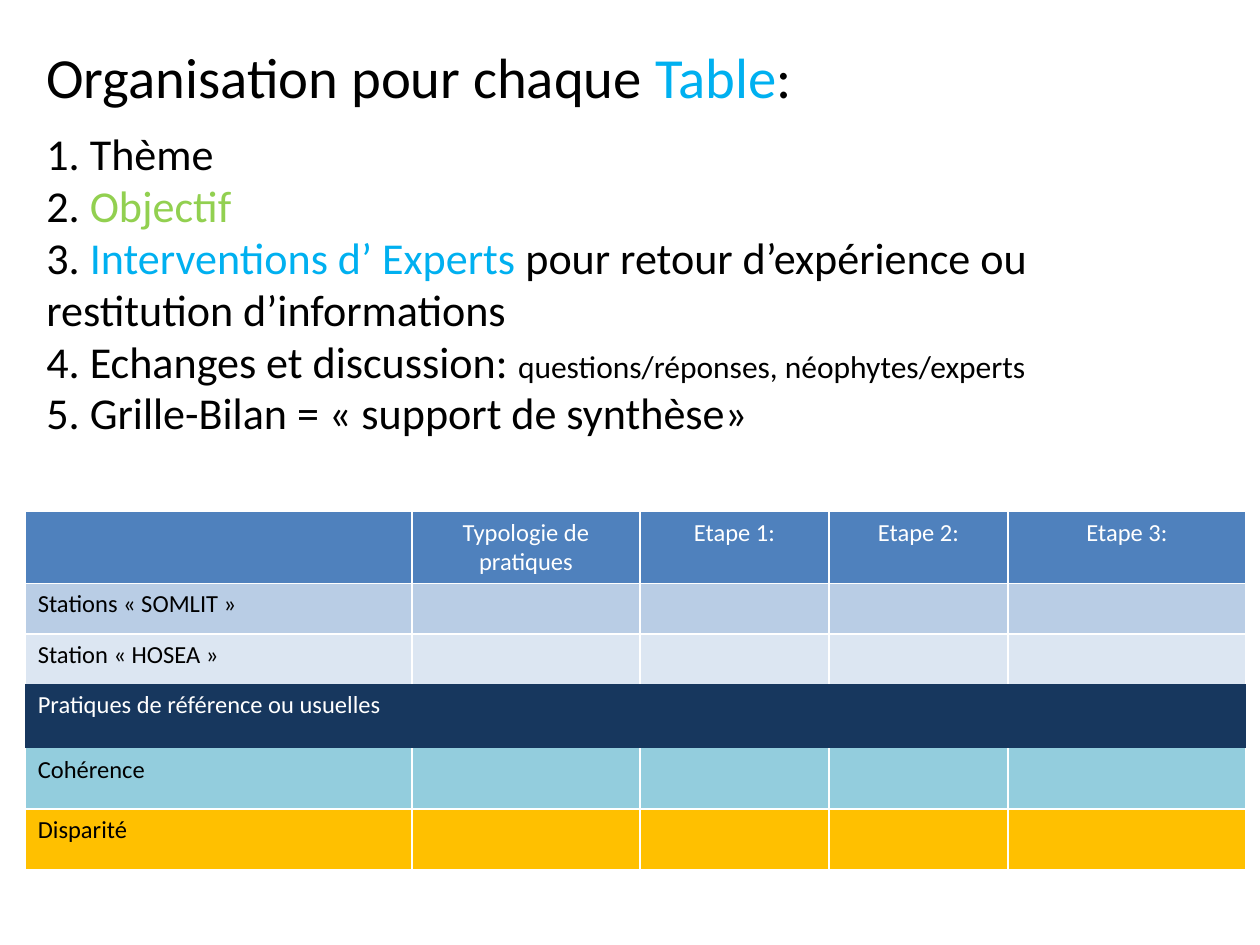
import pptx
import pptx.dml.color
import pptx.enum.text
import pptx.oxml.ns
import pptx.util
from lxml import etree

Inches, Pt = pptx.util.Inches, pptx.util.Pt
ANCHOR = pptx.enum.text.MSO_ANCHOR
ALIGN = pptx.enum.text.PP_ALIGN

BLACK, WHITE, BLUE, GREEN = "000000", "FFFFFF", "00B0F0", "92D050"
FONT = "Calibri"
HEADING, ITEM, DETAIL, CELL = 32.4, 25.2, 18, 14

# Agenda: one line per paragraph, each a list of (text, size, colour)
AGENDA = [
    [("Organisation pour chaque ", HEADING, BLACK), ("Table", HEADING, BLUE), (":", HEADING, BLACK)],
    [("1. Thème", ITEM, BLACK)],
    [("2. ", ITEM, BLACK), ("Objectif", ITEM, GREEN)],
    [("3. ", ITEM, BLACK), ("Interventions d’ Experts ", ITEM, BLUE),
     ("pour retour d’expérience ou restitution d’informations", ITEM, BLACK)],
    [("4. Echanges et discussion: ", ITEM, BLACK),
     ("questions/réponses, néophytes/experts", DETAIL, BLACK)],
    [("5. Grille-Bilan = « support de synthèse»", ITEM, BLACK)],
]

# Summary grid: (texts, height, fill, text colour, bordered sides)
COLUMNS = [3.07, 1.81, 1.5, 1.42, 1.89]
GRID = [
    (["", "Typologie de pratiques", "Etape 1:", "Etape 2:", "Etape 3:"], 0.57, "4F81BD", WHITE, "LRTB"),
    (["Stations « SOMLIT »"], 0.4, "B9CDE5", BLACK, "LRTB"),
    (["Station « HOSEA »"], 0.4, "DCE6F2", BLACK, "LRT"),
    (["Pratiques de référence ou usuelles"], 0.51, "17375E", WHITE, ""),
    (["Cohérence"], 0.48, "93CDDD", BLACK, "LRB"),
    (["Disparité"], 0.48, "FFC000", BLACK, "LRTB"),
]


def rgb(colour):
    return pptx.dml.color.RGBColor.from_string(colour)


def add_run(paragraph, text, size, colour):
    run = paragraph.add_run()
    run.text = text
    for name, value in {"name": FONT, "size": Pt(size), "bold": False}.items():
        setattr(run.font, name, value)
    run.font.color.rgb = rgb(colour)


def set_borders(cell, sides):
    properties = cell._tc.get_or_add_tcPr()
    qn = pptx.oxml.ns.qn
    for side in "LRTB":
        line = etree.SubElement(properties, qn(f"a:ln{side}"), w=str(Pt(1)))
        if side in sides:
            paint = etree.SubElement(line, qn("a:solidFill"))
            etree.SubElement(paint, qn("a:srgbClr"), val=WHITE)
        else:
            etree.SubElement(line, qn("a:noFill"))


def add_agenda(slide):
    frame = slide.shapes.add_textbox(Inches(0.27), Inches(1.55), Inches(9), Inches(1.25)).text_frame
    # The larger bottom margin lifts the centred text clear of the grid
    layout = {"word_wrap": True, "vertical_anchor": ANCHOR.MIDDLE, "margin_bottom": Inches(0.55)}
    for name, value in layout.items():
        setattr(frame, name, value)
    for index, runs in enumerate(AGENDA):
        paragraph = frame.add_paragraph() if index else frame.paragraphs[0]
        paragraph.line_spacing = 0.98
        if index == 1:
            paragraph.space_before = Pt(10)
        for run in runs:
            add_run(paragraph, *run)


def add_grid(slide):
    heights = [row[1] for row in GRID]
    grid = slide.shapes.add_table(len(GRID), len(COLUMNS), Inches(0.2), Inches(4.06),
                                  Inches(sum(COLUMNS)), Inches(sum(heights))).table
    grid.first_row = grid.horz_banding = False
    for column, width in zip(grid.columns, COLUMNS):
        column.width = Inches(width)
    for r, (texts, height, fill, colour, sides) in enumerate(GRID):
        grid.rows[r].height = Inches(height)
        for c in range(len(COLUMNS)):
            cell = grid.cell(r, c)
            set_borders(cell, sides)
            cell.fill.solid()
            cell.fill.fore_color.rgb = rgb(fill)
            if c < len(texts) and texts[c]:
                paragraph = cell.text_frame.paragraphs[0]
                paragraph.alignment = ALIGN.LEFT if r else ALIGN.CENTER
                add_run(paragraph, texts[c], CELL, colour)


def main():
    deck = pptx.Presentation()
    deck.slide_width, deck.slide_height = Inches(10), Inches(7.5)
    slide = deck.slides.add_slide(deck.slide_layouts[6])
    add_agenda(slide)
    add_grid(slide)
    deck.save("out.pptx")


if __name__ == "__main__":
    main()
